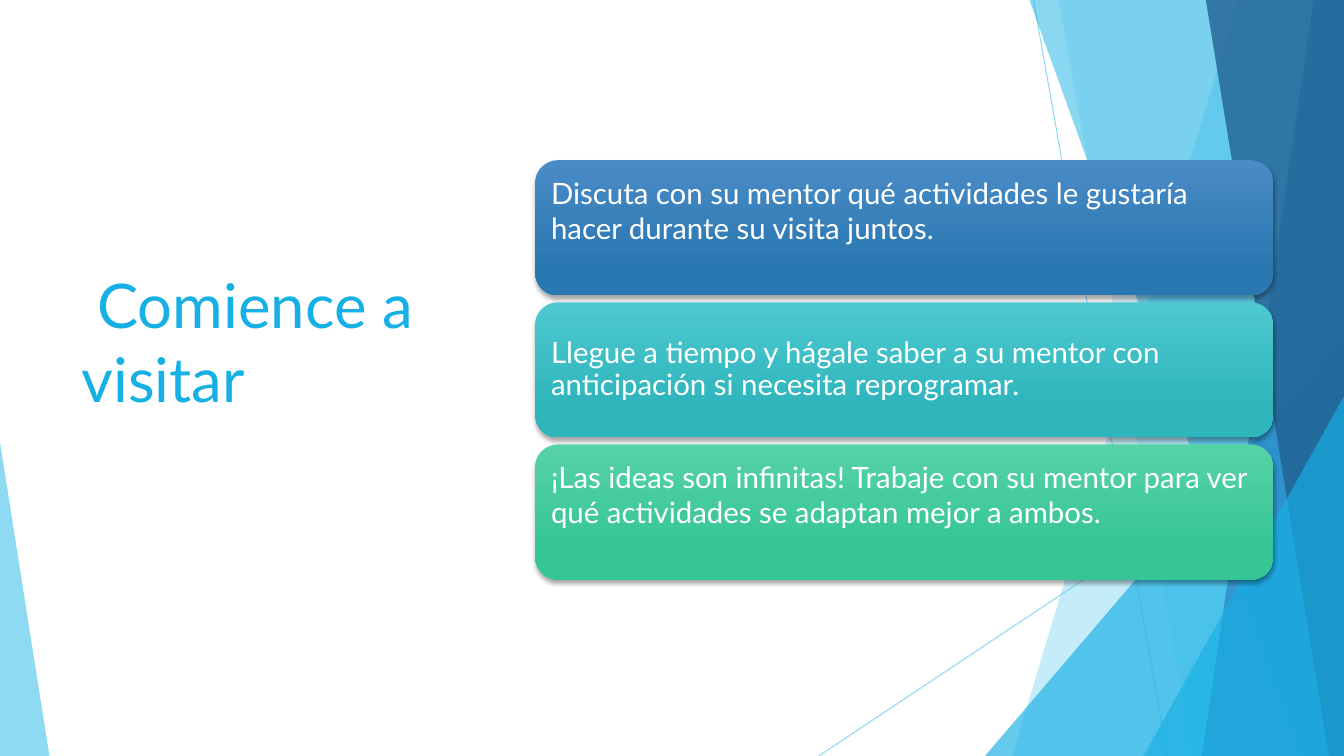
from dataclasses import dataclass

from lxml.etree import SubElement
from pptx import Presentation
from pptx.dml.color import RGBColor
from pptx.enum.shapes import MSO_CONNECTOR, MSO_SHAPE
from pptx.enum.text import MSO_ANCHOR, PP_ALIGN
from pptx.oxml.ns import qn
from pptx.util import Inches, Pt

SLIDE_W, SLIDE_H = 13.33, 7.5
SKY, CYAN, BLUE, NAVY, WHITE = "5FCBEF", "17B0E4", "2E83C3", "226292", "FFFFFF"
FONT = "Lato"


@dataclass
class Ray:
    start: tuple[float, float]
    end: tuple[float, float]


@dataclass
class Facet:
    """Band that runs from a slanted left side to the slide's right edge."""
    top_x: float
    bottom_x: float
    color: str
    opacity: int


@dataclass
class Wedge:
    """Right triangle standing on the slide's bottom edge."""
    left: float
    width: float
    height: float
    apex: float
    color: str
    opacity: int


@dataclass
class Card:
    text: str
    top_color: str
    bottom_color: str
    line_spacing: float = 1.0
    bottom_inset: float = 0.5


RAYS = [Ray((10.25, 0), (11.58, SLIDE_H)), Ray((SLIDE_W, 4.03), (8.12, SLIDE_H))]
DECORATION = [
    Facet(12.28, 10.04, SKY, 36),
    Facet(10.5, 11.83, SKY, 20),
    Wedge(9.77, 3.56, 4.17, 1, CYAN, 66),
    Facet(10.21, 12.91, CYAN, 50),
    Facet(13.03, 11.92, BLUE, 70),
    Facet(11.96, 13.18, NAVY, 80),
    Wedge(11.34, 1.99, 3.57, 1, CYAN, 66),
    Wedge(0, 0.49, 3.11, 0, SKY, 70),
]
CARDS = [
    Card("Discuta con su mentor qué actividades le gustaría hacer durante su visita juntos.",
         "4A8BC6", "2A78B2"),
    Card("Llegue a tiempo y hágale saber a su mentor con anticipación si necesita reprogramar.",
         "4DC8D0", "2FB5BC", line_spacing=0.9, bottom_inset=0.15),
    Card("¡Las ideas son infinitas! Trabaje con su mentor para ver qué actividades "
         "se adaptan mejor a ambos.", "56D2A7", "36C596"),
]
CARD_LEFT, CARD_TOP, CARD_W, CARD_H, CARD_STEP = 5.31, 1.59, 7.32, 1.34, 1.41


def rgb(color: str) -> RGBColor:
    return RGBColor.from_string(color)


def set_opacity(shape, percent: int) -> None:
    for color in shape._element.spPr.iter(qn("a:srgbClr")):
        SubElement(color, qn("a:alpha"), val=str(percent * 1000))


def write_text(shape, text: str, *, size: float, color: str, line_spacing: float = 1.0,
               side_inset: float = 0.1, top_inset: float = 0.05,
               bottom_inset: float = 0.05) -> None:
    frame = shape.text_frame
    frame.word_wrap = True
    frame.vertical_anchor = MSO_ANCHOR.MIDDLE
    frame.margin_left = frame.margin_right = Inches(side_inset)
    frame.margin_top, frame.margin_bottom = Inches(top_inset), Inches(bottom_inset)
    paragraph = frame.paragraphs[0]
    paragraph.alignment = PP_ALIGN.LEFT
    paragraph.line_spacing = line_spacing
    run = paragraph.add_run()
    run.text = text
    run.font.name, run.font.size = FONT, Pt(size)
    run.font.color.rgb = rgb(color)


def draw_ray(slide, ray: Ray) -> None:
    line = slide.shapes.add_connector(
        MSO_CONNECTOR.STRAIGHT, *(Inches(v) for v in ray.start + ray.end))
    line.line.color.rgb = rgb(SKY)
    line.line.width = Pt(0.75)
    set_opacity(line, 70)
    SubElement(line._element.spPr, qn("a:effectLst"))


def draw_decoration(slide, part: Facet | Wedge) -> None:
    if isinstance(part, Facet):
        corners = [(SLIDE_W, 0), (SLIDE_W, SLIDE_H), (part.bottom_x, SLIDE_H)]
        outline = slide.shapes.build_freeform(Inches(part.top_x), 0)
        outline.add_line_segments([(Inches(x), Inches(y)) for x, y in corners])
        shape = outline.convert_to_shape()
    else:
        shape = slide.shapes.add_shape(
            MSO_SHAPE.ISOSCELES_TRIANGLE, Inches(part.left), Inches(SLIDE_H - part.height),
            Inches(part.width), Inches(part.height))
        shape.adjustments[0] = part.apex
    shape.shadow.inherit = False
    shape.fill.solid()
    shape.fill.fore_color.rgb = rgb(part.color)
    shape.line.fill.background()
    set_opacity(shape, part.opacity)


def add_soft_shadow(shape) -> None:
    shape.shadow.inherit = False
    effects = shape._element.spPr.find(qn("a:effectLst"))
    shadow = SubElement(effects, qn("a:outerShdw"), blurRad=str(Pt(3)), dist=str(Pt(2)),
                        dir="5400000", rotWithShape="0")
    black = SubElement(shadow, qn("a:srgbClr"), val="000000")
    SubElement(black, qn("a:alpha"), val="35000")


def draw_card(slide, card: Card, top: float) -> None:
    shape = slide.shapes.add_shape(
        MSO_SHAPE.ROUNDED_RECTANGLE, Inches(CARD_LEFT), Inches(top),
        Inches(CARD_W), Inches(CARD_H))
    shape.fill.gradient()
    shape.fill.gradient_angle = 270
    stops = zip(shape.fill.gradient_stops, (card.top_color, card.bottom_color), (0, 0.78))
    for stop, color, position in stops:
        stop.color.rgb = rgb(color)
        stop.position = position
    shape.line.fill.background()
    add_soft_shadow(shape)
    write_text(shape, card.text, size=21, color=WHITE, line_spacing=card.line_spacing,
               side_inset=0.09, top_inset=0.15, bottom_inset=card.bottom_inset)


def main() -> None:
    presentation = Presentation()
    presentation.slide_width = Inches(SLIDE_W)
    presentation.slide_height = Inches(SLIDE_H)
    slide = presentation.slides.add_slide(presentation.slide_layouts[6])

    for ray in RAYS:
        draw_ray(slide, ray)
    for part in DECORATION:
        draw_decoration(slide, part)

    title = slide.shapes.add_textbox(Inches(0.71), Inches(1.51), Inches(3.88), Inches(4.48))
    write_text(title, " Comience a visitar", size=44, color=CYAN, bottom_inset=0.78)

    for row, card in enumerate(CARDS):
        draw_card(slide, card, CARD_TOP + row * CARD_STEP)

    presentation.save("out.pptx")


if __name__ == "__main__":
    main()
